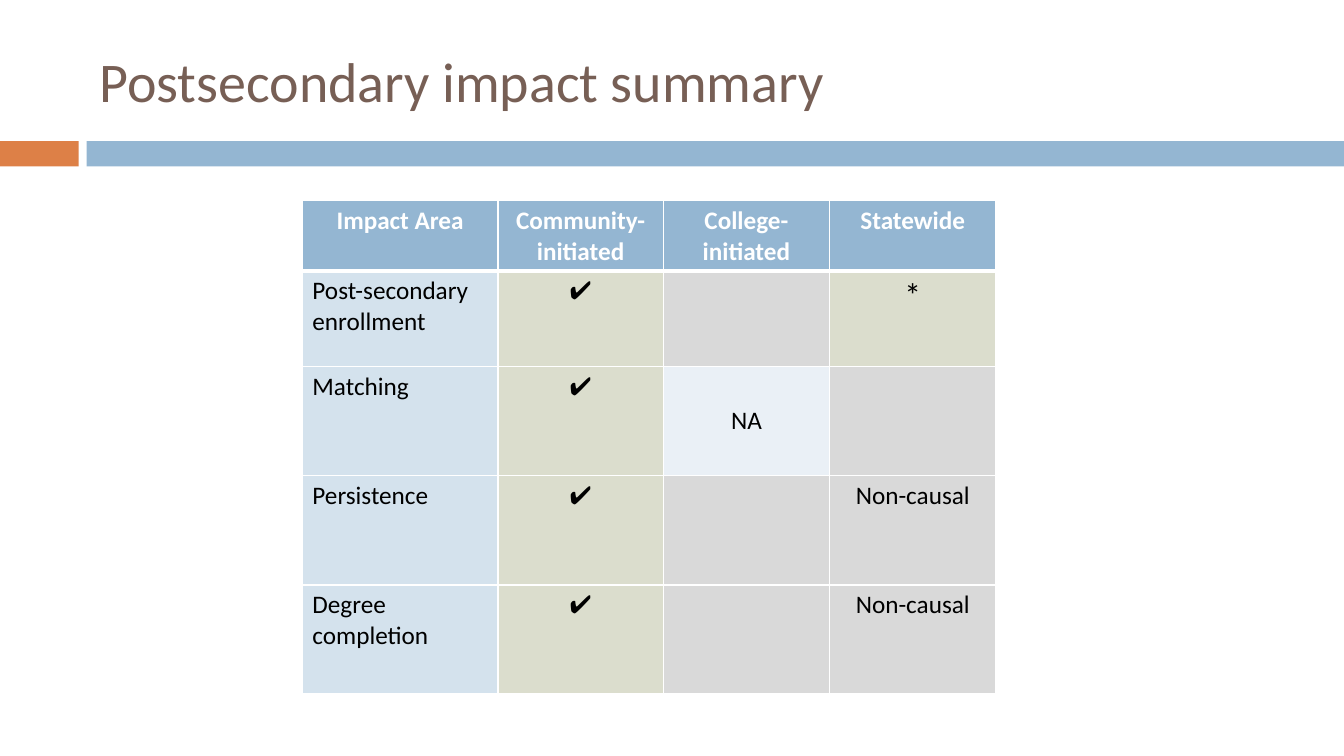
from lxml.etree import SubElement
from pptx import Presentation
from pptx.dml.color import RGBColor
from pptx.enum.shapes import MSO_SHAPE
from pptx.enum.text import MSO_ANCHOR, PP_ALIGN
from pptx.oxml.ns import qn
from pptx.util import Pt

TITLE = "Postsecondary impact summary"
HEAD = ["Impact Area", "Community- initiated", "College- initiated", "Statewide"]
ROWS = [
    [("Post-secondary enrollment", "area"), ("✔", "yes"), ("", "none"), ("*", "yes")],
    [("Matching", "area"), ("✔", "yes"), ("NA", "na"), ("", "none")],
    [("Persistence", "area"), ("✔", "yes"), ("", "none"), ("Non-causal", "none")],
    [("Degree completion", "area"), ("✔", "yes"), ("", "none"), ("Non-causal", "none")],
]
WIDTHS = [139.7, 118.1, 118.8, 118.8]
HEIGHTS = [50, 68.4, 78, 78, 78]
BARS = [(0, 56.2, "accent"), (61.9, 898.1, "head")]
THEME = {
    "font": "Calibri", "title": "775F55", "accent": "DD8047", "head": "94B6D2",
    "area": "D4E2ED", "yes": "DBDDCD", "none": "D9D9D9", "na": "EAF0F6",
    "white": "FFFFFF", "black": "000000",
    "title_size": 40, "cell_size": 18, "star_size": 24,
}


def color(name):
    return RGBColor.from_string(THEME[name])


def style(para, size, ink, bold=False):
    font = para.font
    font.name = THEME["font"]
    font.size = Pt(THEME[size])
    font.bold = bold
    font.color.rgb = color(ink)


def add_bar(slide, left, width, fill):
    bar = slide.shapes.add_shape(MSO_SHAPE.RECTANGLE, Pt(left), Pt(100.8), Pt(width), Pt(18))
    bar.shadow.inherit = False
    bar.fill.solid()
    bar.fill.fore_color.rgb = color(fill)
    bar.line.fill.background()


def add_title(slide):
    box = slide.shapes.add_textbox(Pt(64), Pt(18), Pt(856), Pt(78))
    frame = box.text_frame
    frame.word_wrap = True
    frame.vertical_anchor = MSO_ANCHOR.MIDDLE
    frame.text = TITLE
    style(frame.paragraphs[0], "title_size", "title")


def add_edges(cell, row):
    props = cell._tc.get_or_add_tcPr()
    thick = {"lnT": row == 1, "lnB": row == 0}
    for tag in ("lnL", "lnR", "lnT", "lnB"):
        edge = SubElement(props, qn("a:" + tag), w=str(Pt(3 if thick.get(tag) else 1)))
        fill = SubElement(edge, qn("a:solidFill"))
        SubElement(fill, qn("a:srgbClr"), val=THEME["white"])


def fill_cell(cell, row, col, text, kind):
    add_edges(cell, row)
    cell.fill.solid()
    cell.fill.fore_color.rgb = color(kind)
    cell.vertical_anchor = MSO_ANCHOR.MIDDLE if kind == "na" else MSO_ANCHOR.TOP
    cell.text = text
    para = cell.text_frame.paragraphs[0]
    para.alignment = PP_ALIGN.LEFT if kind == "area" else PP_ALIGN.CENTER
    size = "star_size" if text == "*" else "cell_size"
    top = kind == "head"
    style(para, size, "white" if top else "black", top)


def add_grid(slide):
    data = [[(text, "head") for text in HEAD]] + ROWS
    frame = slide.shapes.add_table(
        len(data), len(HEAD), Pt(216), Pt(143), Pt(sum(WIDTHS)), Pt(sum(HEIGHTS)))
    table = frame.table
    table.horz_banding = False
    for col, width in zip(table.columns, WIDTHS):
        col.width = Pt(width)
    for row, height in zip(table.rows, HEIGHTS):
        row.height = Pt(height)
    for row, line in enumerate(data):
        for col, (text, kind) in enumerate(line):
            fill_cell(table.cell(row, col), row, col, text, kind)


def main():
    deck = Presentation()
    deck.slide_width, deck.slide_height = Pt(960), Pt(540)
    slide = deck.slides.add_slide(deck.slide_layouts[6])
    for bar in BARS:
        add_bar(slide, *bar)
    add_title(slide)
    add_grid(slide)
    deck.save("out.pptx")


if __name__ == "__main__":
    main()
